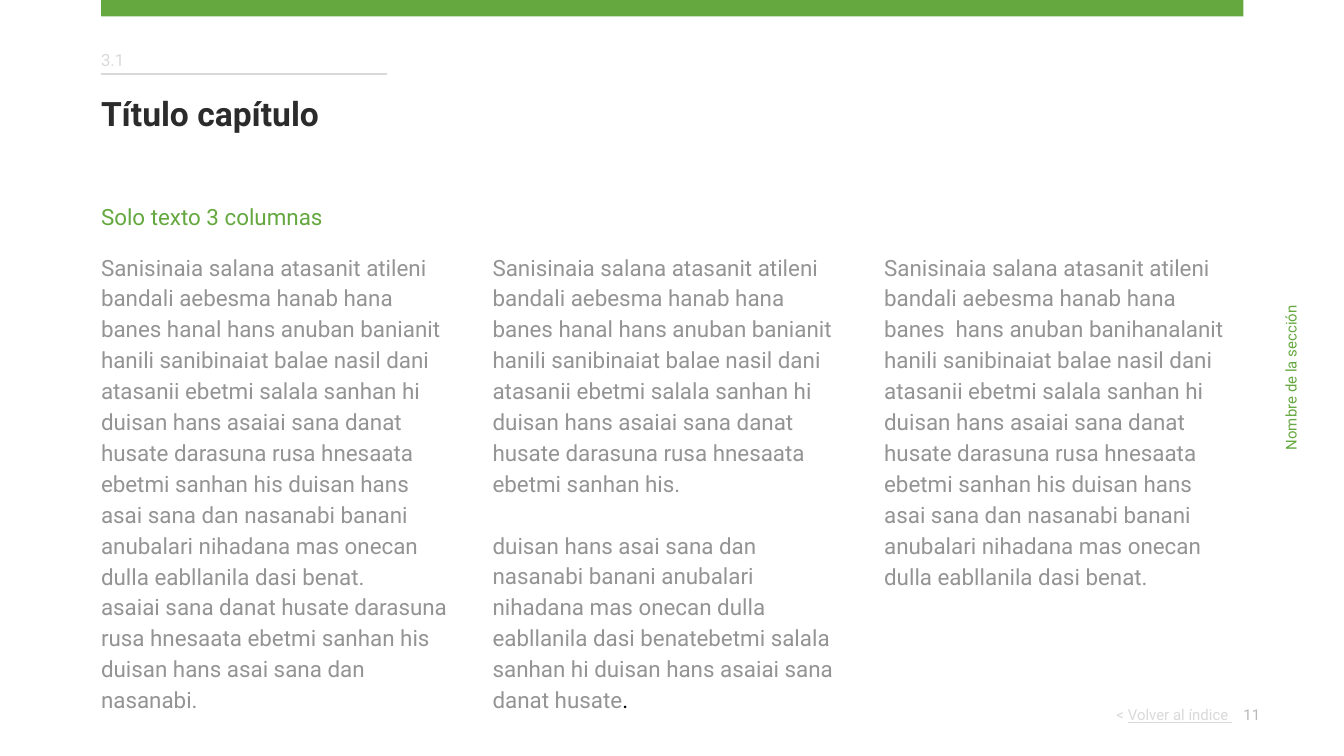
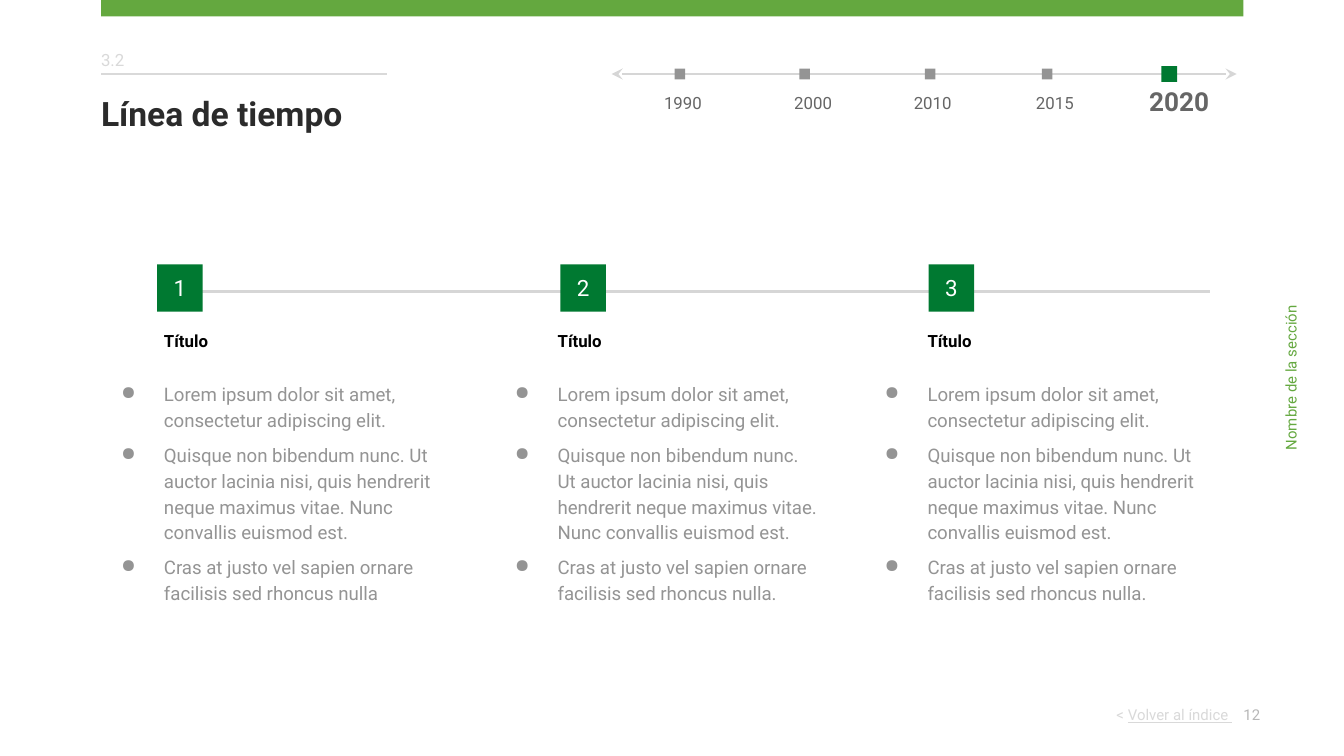
from dataclasses import dataclass

from lxml.etree import SubElement
from pptx import Presentation
from pptx.dml.color import RGBColor
from pptx.enum.shapes import MSO_CONNECTOR as Link, MSO_SHAPE as Preset
from pptx.enum.text import MSO_ANCHOR as Anchor, PP_ALIGN as Align
from pptx.oxml.ns import qn
from pptx.util import Cm, Pt


@dataclass(frozen=True)
class Theme:
    font: str = "Roboto"
    band: str = "64A83F"
    accent: str = "007931"
    title: str = "2B2B2B"
    body: str = "949494"
    year: str = "666666"
    pale: str = "D9D9D9"
    rule: str = "D6D6D6"
    page_number: str = "B7B7B7"
    black: str = "000000"
    white: str = "FFFFFF"
    title_size: float = 18
    current_size: float = 14
    body_size: float = 12
    bullet_size: float = 10
    label_size: float = 9
    footer_size: float = 8
    leading: float = 1.15


THEME = Theme()


@dataclass(frozen=True)
class Span:
    text: str
    size: float
    color: str
    bold: bool = False
    underline: bool = False


@dataclass(frozen=True)
class Para:
    spans: tuple
    align: Align = Align.LEFT
    leading: float = 1.0
    before: float = 0
    margin: float = 0
    indent: float = 0
    bullet: str = ""


SECTION = "Nombre de la sección"
BACK = ("< ", "Volver al índice ")

TEXT_PAGE = ("3.1", "Título capítulo", "11")
SUBTITLE = "Solo texto 3 columnas"
OPENING = "Sanisinaia salana atasanit atileni bandali aebesma hanab hana "
MIDDLE = (
    " hanili sanibinaiat balae nasil dani atasanii ebetmi salala sanhan hi duisan hans "
    "asaiai sana danat husate darasuna rusa hnesaata ebetmi sanhan his"
)
CLOSING = (
    " duisan hans asai sana dan nasanabi banani anubalari nihadana mas onecan dulla "
    "eabllanila dasi benat."
)
COLUMNS = [
    [
        OPENING + "banes hanal hans anuban banianit" + MIDDLE + CLOSING,
        "asaiai sana danat husate darasuna rusa hnesaata ebetmi sanhan his duisan hans "
        "asai sana dan nasanabi.",
    ],
    [
        OPENING + "banes hanal hans anuban banianit" + MIDDLE + ".",
        "duisan hans asai sana dan nasanabi banani anubalari nihadana mas onecan dulla "
        "eabllanila dasi benatebetmi salala sanhan hi duisan hans asaiai sana danat husate",
    ],
    [OPENING + "banes  hans anuban banihanalanit" + MIDDLE + CLOSING],
]
SPLIT_COLUMN = 1
SPLIT_GAP = 16.5

TIMELINE_PAGE = ("3.2", "Línea de tiempo", "12")
YEARS = [
    ("1990", 12.85, 12.5),
    ("2000", 15.21, 14.96),
    ("2010", 17.58, 17.22),
    ("2015", 19.79, 19.53),
    ("2020", 22.1, 21.67),
]
CURRENT_YEAR = "2020"
STEP_TITLE = "Título"
BULLETS = [
    "Lorem ipsum dolor sit amet, consectetur adipiscing elit.",
    "Quisque non bibendum nunc. Ut auctor lacinia nisi, quis hendrerit neque maximus "
    "vitae. Nunc convallis euismod est.",
    "Cras at justo vel sapien ornare facilisis sed rhoncus nulla",
]
STEPS = [
    ("1", 2.97, 1.78, 6.58, ""),
    ("2", 10.59, 9.22, 6.27, "."),
    ("3", 17.55, 16.21, 6.58, "."),
]

LEFT = 1.91
BAND_WIDTH = 21.59
RULE_TOP = 1.4
COLUMN_STEP = 7.4


def rgb(color):
    return RGBColor.from_string(color)


def write(shape, paras, inset=0, anchor=Anchor.TOP):
    frame = shape.text_frame
    frame.word_wrap = True
    frame.vertical_anchor = anchor
    frame.margin_left = frame.margin_right = Cm(inset)
    frame.margin_top = frame.margin_bottom = Cm(inset)
    for index, content in enumerate(paras):
        para = frame.add_paragraph() if index else frame.paragraphs[0]
        para.alignment = content.align
        para.line_spacing = content.leading
        para.space_before = Pt(content.before)
        properties = para._p.get_or_add_pPr()
        properties.set("marL", str(Cm(content.margin)))
        properties.set("indent", str(Cm(content.indent)))
        if content.bullet:
            tint = SubElement(properties, qn("a:buClr"))
            SubElement(tint, qn("a:srgbClr")).set("val", content.spans[0].color)
            SubElement(properties, qn("a:buChar")).set("char", content.bullet)
        for part in content.spans:
            span = para.add_run()
            span.text = part.text
            span.font.name = THEME.font
            span.font.size = Pt(part.size)
            span.font.bold = part.bold
            span.font.underline = part.underline
            span.font.color.rgb = rgb(part.color)


def add_text(page, place, paras, inset=0, anchor=Anchor.TOP, rotation=0):
    box = page.shapes.add_textbox(*map(Cm, place))
    box.rotation = rotation
    write(box, paras, inset, anchor)


def add_label(page, place, text, size, color, bold=False, inset=0):
    add_text(page, place, [Para((Span(text, size, color, bold),))], inset)


def add_block(page, place, color):
    block = page.shapes.add_shape(Preset.RECTANGLE, *map(Cm, place))
    block.shadow.inherit = False
    block.fill.solid()
    block.fill.fore_color.rgb = rgb(color)
    block.line.fill.background()
    return block


def add_rule(page, start, end, top, color, width, arrows=False):
    rule = page.shapes.add_connector(Link.STRAIGHT, Cm(start), Cm(top), Cm(end), Cm(top))
    rule.line.color.rgb = rgb(color)
    rule.line.width = Pt(width)
    if arrows:
        for name in ("a:headEnd", "a:tailEnd"):
            SubElement(rule.get_or_add_ln(), qn(name)).set("type", "stealth")
    SubElement(rule.element.spPr, qn("a:effectLst"))


def add_page(deck, chapter, title, number):
    page = deck.slides.add_slide(deck.slide_layouts[6])
    add_block(page, (LEFT, 0, BAND_WIDTH, 0.31), THEME.band)
    add_rule(page, LEFT, 7.32, RULE_TOP, THEME.pale, 0.75)
    add_label(page, (LEFT, 0.94, 1.24, 1.17), chapter, THEME.label_size, THEME.pale)
    add_label(page, (LEFT, 1.75, 8.2, 2.06), title, THEME.title_size, THEME.title, True)
    back = tuple(
        Span(text, THEME.footer_size, THEME.pale, underline=bool(index))
        for index, text in enumerate(BACK)
    )
    add_text(page, (16.76, 13.34, 6.53, 0.56), [Para(back, Align.RIGHT)])
    add_label(page, (23.5, 13.34, 1.52, 1.09), number, THEME.footer_size, THEME.page_number)
    section = Para((Span(SECTION, THEME.footer_size, THEME.band),), Align.CENTER)
    add_text(page, (21.13, 6.86, 6.53, 0.56), [section], anchor=Anchor.MIDDLE, rotation=270)
    return page


def build_columns(deck):
    page = add_page(deck, *TEXT_PAGE)
    add_label(page, (LEFT, 3.84, 8.2, 0.89), SUBTITLE, THEME.body_size, THEME.band)
    for column, texts in enumerate(COLUMNS):
        paras = []
        for index, text in enumerate(texts):
            spans = [Span(text, THEME.body_size, THEME.body)]
            split = column == SPLIT_COLUMN and index > 0
            if split:
                spans.append(Span(".", THEME.body_size, THEME.black))
            gap = SPLIT_GAP if split else 0
            paras.append(Para(tuple(spans), leading=THEME.leading, before=gap))
        add_text(page, (LEFT + column * COLUMN_STEP, 4.72, 6.58, 7.65), paras)


def add_years(page):
    add_rule(page, 11.56, 23.37, RULE_TOP, THEME.rule, 0.75, arrows=True)
    for year, center, left in YEARS:
        current = year == CURRENT_YEAR
        side = 0.3 if current else 0.2
        color = THEME.accent if current else THEME.body
        add_block(page, (center - side / 2, RULE_TOP - side / 2, side, side), color)
        place = (left, 1.57, 1.65, 0.79) if current else (left, 1.7, 1.12, 0.58)
        size = THEME.current_size if current else THEME.label_size
        add_label(page, place, year, size, THEME.year, current, 0.05)


def add_steps(page):
    add_rule(page, 3.56, 22.86, 5.51, THEME.rule, 1.5)
    for number, square_left, text_left, width, ending in STEPS:
        square = add_block(page, (square_left, 5, 0.86, 0.89), THEME.accent)
        digit = Span(number, THEME.body_size, THEME.white)
        write(square, [Para((digit,), Align.CENTER)], anchor=Anchor.MIDDLE)
        heading = Span(STEP_TITLE, THEME.label_size, THEME.black, True)
        paras = [Para((heading,), indent=1.27)]
        for index, text in enumerate(BULLETS):
            tail = ending if index == len(BULLETS) - 1 else ""
            paras.append(Para(
                (Span(text + tail, THEME.bullet_size, THEME.body),),
                leading=THEME.leading,
                before=5 if index else 15.5,
                margin=1.27,
                indent=-0.81,
                bullet="●",
            ))
        add_text(page, (text_left, 6.2, width, 6.27), paras, inset=0.05)


def build_timeline(deck):
    page = add_page(deck, *TIMELINE_PAGE)
    add_years(page)
    add_steps(page)


def main():
    deck = Presentation()
    deck.slide_width, deck.slide_height = Cm(25.4), Cm(14.29)
    build_columns(deck)
    build_timeline(deck)
    deck.save("out.pptx")


if __name__ == "__main__":
    main()
